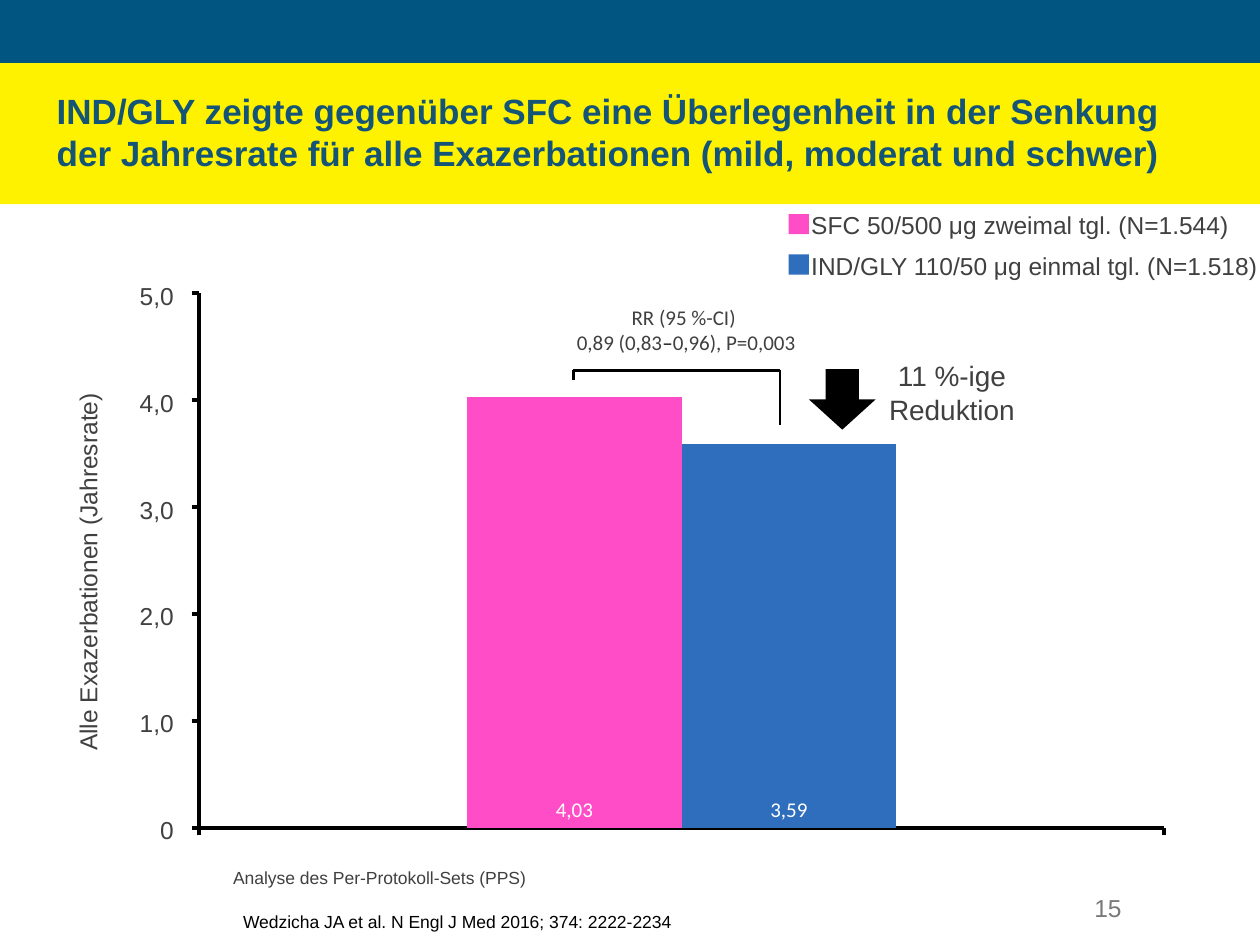
from pptx import Presentation
from pptx.chart.data import CategoryChartData
from pptx.dml.color import RGBColor
from pptx.enum import chart as ch, shapes, text
from pptx.oxml import parse_xml
from pptx.oxml.ns import nsdecls, qn
from pptx.util import Inches, Pt

NAVY = RGBColor(0x00, 0x55, 0x81)
YELLOW = RGBColor(0xFF, 0xF2, 0x00)
TITLE = RGBColor(0x14, 0x54, 0x77)
PINK = RGBColor(0xFF, 0x4D, 0xC7)
BLUE = RGBColor(0x2E, 0x6E, 0xBC)
DARK = RGBColor(0x40, 0x40, 0x40)
GREY = RGBColor(0x79, 0x79, 0x79)
BLACK = RGBColor(0, 0, 0)
WHITE = RGBColor(0xFF, 0xFF, 0xFF)
LEFT, CENTER, RIGHT = text.PP_ALIGN.LEFT, text.PP_ALIGN.CENTER, text.PP_ALIGN.RIGHT
INSET = (0.1, 0.05, 0.1, 0.05)
NO_INSET = (0, 0, 0, 0)


def box(x, y, w, h):
    return Inches(x), Inches(y), Inches(w), Inches(h)


def style(font, size, color, name="Arial", bold=False):
    font.size, font.name, font.bold = Pt(size), name, bold
    font.color.rgb = color


def set_insets(tf, insets):
    tf.margin_left, tf.margin_top, tf.margin_right, tf.margin_bottom = map(Inches, insets)


def add_label(s, area, pieces, size=14, color=DARK, align=LEFT, name="Arial",
              insets=INSET, wrap=True, anchor=text.MSO_ANCHOR.TOP):
    sp = s.shapes.add_textbox(*area)
    tf = sp.text_frame
    tf.word_wrap, tf.vertical_anchor = wrap, anchor
    set_insets(tf, insets)
    p = tf.paragraphs[0]
    p.text, p.alignment = pieces[0], align
    for piece in pieces[1:]:
        p.add_run().text = piece
    for r in p.runs:
        style(r.font, size, color, name)
    return sp


def add_filled(s, kind, area, color):
    sp = s.shapes.add_shape(kind, *area)
    sp.shadow.inherit = False
    sp.fill.solid()
    sp.fill.fore_color.rgb = color
    sp.line.fill.background()
    return sp


def add_line(s, x1, y1, x2, y2):
    line = s.shapes.add_connector(shapes.MSO_CONNECTOR.STRAIGHT, x1, y1, x2, y2)
    line.line.color.rgb, line.line.width = BLACK, Pt(1.5)
    line.element.spPr.append(parse_xml("<a:effectLst %s/>" % nsdecls("a")))


def add_header(s, area, title):
    x, y, w, h = area
    bar = Inches(0.5)
    add_filled(s, shapes.MSO_SHAPE.RECTANGLE, (x, y, w, bar), NAVY)
    add_filled(s, shapes.MSO_SHAPE.RECTANGLE, (x, y + bar, w, h - bar), YELLOW)
    sp = s.shapes.title
    sp.element.getparent().append(sp.element)
    sp.left, sp.top = x + Inches(0.45), y + Inches(0.58)
    sp.width, sp.height = w - Inches(1), Inches(0.93)
    tf = sp.text_frame
    tf.text = title
    tf.word_wrap, tf.auto_size = True, text.MSO_AUTO_SIZE.NONE
    tf.vertical_anchor = text.MSO_ANCHOR.MIDDLE
    set_insets(tf, NO_INSET)
    p = tf.paragraphs[0]
    p.alignment = LEFT
    style(p.runs[0].font, 20, TITLE, bold=True)


def add_rate_chart(s, area, layout, bars):
    data = CategoryChartData(number_format="0.00")
    data.categories = ["1"]
    for name, value, _, _ in bars:
        data.add_series(name, [value])
    chart = s.shapes.add_chart(ch.XL_CHART_TYPE.COLUMN_CLUSTERED, *area, data).chart
    chart.has_legend = chart.has_title = False
    style(chart.font, 10, BLACK, "Calibri")
    for axis in (chart.category_axis, chart.value_axis):
        axis.has_major_gridlines = False
        axis.major_tick_mark = ch.XL_TICK_MARK.OUTSIDE
        axis.minor_tick_mark = ch.XL_TICK_MARK.NONE
        axis.tick_label_position = ch.XL_TICK_LABEL_POSITION.NONE
        style(axis.tick_labels.font, 24, BLACK, "Calibri")
        axis.format.line.color.rgb, axis.format.line.width = BLACK, Pt(2.25)
    axis = chart.value_axis
    axis.minimum_scale, axis.maximum_scale, axis.major_unit = 0, 5, 1
    plot = chart.plots[0]
    plot.gap_width, plot.overlap, plot.vary_by_categories = 250, 0, False
    for series, (_, _, shown, color) in zip(plot.series, bars):
        series.format.fill.solid()
        series.format.fill.fore_color.rgb = color
        labels = series.data_labels
        labels.show_value = True
        labels.number_format, labels.number_format_is_linked = "0.00", False
        labels.position = ch.XL_LABEL_POSITION.INSIDE_BASE
        style(labels.font, 12, WHITE, "Calibri")
        label = series.points[0].data_label
        label.text_frame.text = shown
        style(label.text_frame.paragraphs[0].runs[0].font, 12, WHITE, "Calibri")
        label.position = ch.XL_LABEL_POSITION.INSIDE_BASE
    area_xml = chart.element.find(".//" + qn("c:plotArea"))
    for old in area_xml.findall(qn("c:layout")):
        area_xml.remove(old)
    values = "".join('<c:%s val="%s"/>' % pair for pair in zip("xywh", layout))
    area_xml.insert(0, parse_xml(
        '<c:layout %s><c:manualLayout><c:layoutTarget val="inner"/>'
        '<c:xMode val="edge"/><c:yMode val="edge"/>%s</c:manualLayout></c:layout>'
        % (nsdecls("c"), values)))


def add_axis_labels(s, area, labels, title):
    x, y, w, h = area
    label_h = Inches(0.24)
    for i, label in enumerate(labels):
        top = y + h * i // (len(labels) - 1) - label_h // 2
        add_label(s, (x, top, w, label_h), [label], align=RIGHT, insets=(0, 0, 0.12, 0))
    title_w, title_h = Inches(4.09), Inches(0.34)
    middle_x, middle_y = x - Inches(0.27), y + h // 2 + Inches(0.07)
    sp = add_label(s, (middle_x - title_w // 2, middle_y - title_h // 2, title_w, title_h),
                   [title], align=CENTER)
    sp.rotation = 270


def add_comparison(s, area):
    x, y, w, h = area
    bracket_y = y + Inches(0.57)
    left, right = x + Inches(0.46), x + Inches(2.1)
    add_line(s, left, bracket_y + Inches(0.08), left, bracket_y)
    add_line(s, left, bracket_y, right, bracket_y)
    add_line(s, right, bracket_y, right, bracket_y + Inches(0.43))
    sp = add_label(s, (x, y, Inches(2.71), Inches(0.5)),
                   ["RR (95 %-CI) \v0,89 (0,83", "–", "0,96), P=0,003"],
                   size=12, align=CENTER, name="Calibri")
    sp.text_frame.paragraphs[0].runs[-2].font.color.rgb = BLACK
    add_filled(s, shapes.MSO_SHAPE.DOWN_ARROW,
               (x + Inches(2.33), y + Inches(0.56), Inches(0.53), Inches(0.48)), BLACK)
    reduction_w = Inches(1.65)
    add_label(s, (x + w - reduction_w, y + Inches(0.43), reduction_w, h - Inches(0.43)),
              ["11 %-ige Reduktion"], size=16, align=CENTER)


def add_legend(s, area, entries):
    x, y, w, h = area
    row, key = h // len(entries), Inches(0.16)
    for i, (name, color) in enumerate(entries):
        top = y + i * row
        add_label(s, (x + Inches(0.08), top, w - Inches(0.08), Inches(0.34)),
                  [name], wrap=False)
        add_filled(s, shapes.MSO_SHAPE.RECTANGLE, (x, top + Inches(0.08), key, key), color)


def add_footer(s, area):
    x, y, w, h = area
    add_label(s, (x, y, Inches(4.02), Inches(0.46)), ["Analyse des Per-Protokoll-Sets (PPS)"],
              size=10, insets=NO_INSET, anchor=text.MSO_ANCHOR.BOTTOM)
    add_label(s, (x + Inches(0.08), y + Inches(0.64), Inches(6.16), Inches(0.17)),
              ["Wedzicha JA et al. N Engl J Med 2016; 374: 2222-2234"],
              size=10, color=BLACK, insets=NO_INSET)
    number_w = Inches(2.33)
    add_label(s, (x + w - number_w, y + Inches(0.45), number_w, Inches(0.4)),
              ["15"], color=GREY, align=RIGHT)


def main():
    prs = Presentation()
    prs.slide_width, prs.slide_height = Inches(10), Inches(7.5)
    s = prs.slides.add_slide(prs.slide_layouts[5])
    add_header(s, box(0, 0, 10, 1.62),
               "IND/GLY zeigte gegenüber SFC eine Überlegenheit in der Senkung "
               "der Jahresrate für alle Exazerbationen (mild, moderat und schwer)")
    add_rate_chart(s, box(0.51, 1.73, 8.91, 5.44), (0.12, 0.11, 0.86, 0.78),
                   [("Series 1", 4.03, "4,03", PINK), ("Series 2", 3.59, "3,59", BLUE)])
    add_axis_labels(s, box(0.97, 2.35, 0.53, 4.24),
                    ["5,0", "4,0", "3,0", "2,0", "1,0", "0"],
                    "Alle Exazerbationen (Jahresrate)")
    add_comparison(s, box(4.09, 2.37, 4.29, 1.07))
    add_legend(s, box(6.26, 1.62, 3.84, 0.64),
               [("SFC 50/500 μg zweimal tgl. (N=1.544)", PINK),
                ("IND/GLY 110/50 μg einmal tgl. (N=1.518)", BLUE)])
    add_footer(s, box(1.85, 6.59, 7.15, 0.85))
    prs.save("out.pptx")


if __name__ == "__main__":
    main()
